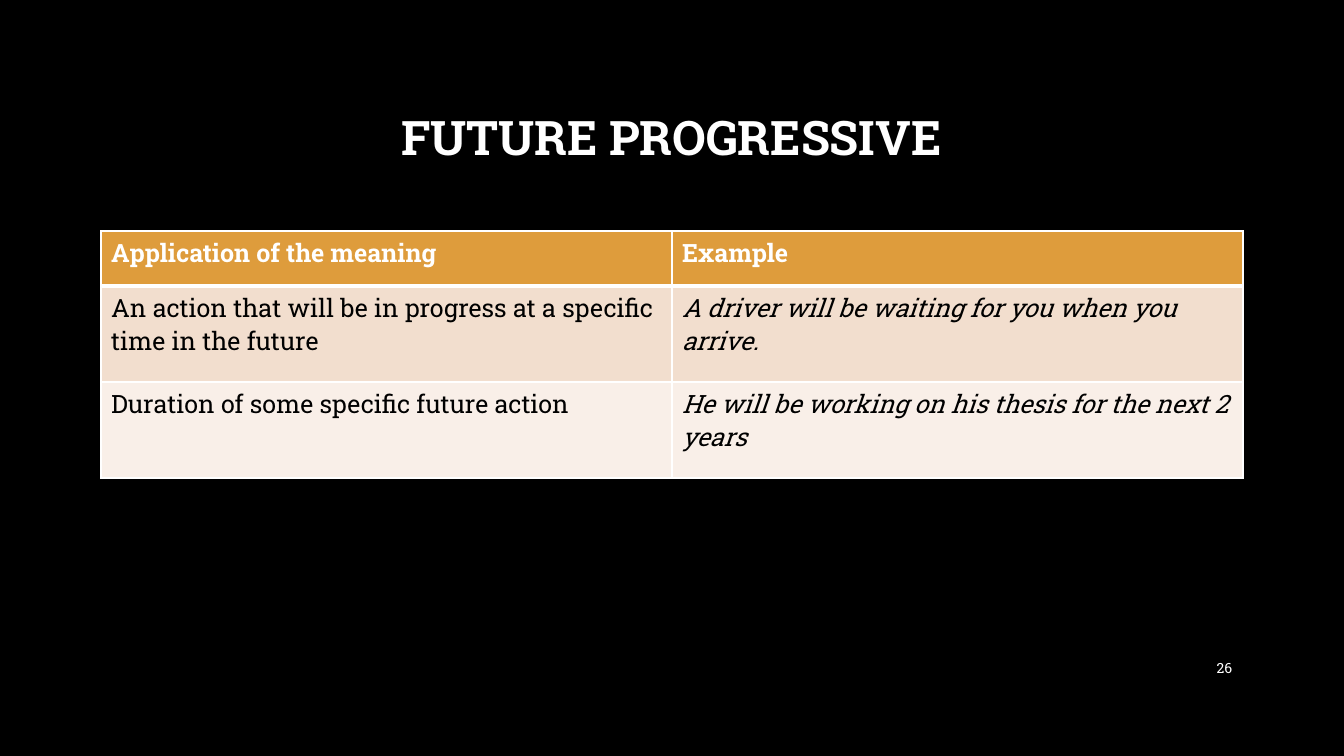
"""Build the slide on the future progressive tense and its uses."""
from dataclasses import dataclass

from lxml import etree
from pptx import Presentation
from pptx import util as u
from pptx.dml.color import RGBColor
from pptx.enum import text
from pptx.oxml import ns
from pptx.slide import Slide
from pptx.table import _Cell
from pptx.text.text import _Paragraph

PX_PER_INCH = 100.8
FONT = "Roboto Slab"
WHITE, BLACK = "FFFFFF", "000000"
THIN, THICK = 1, 3
COLUMN_WIDTH = 571


@dataclass(frozen=True)
class Style:
    size: int
    color: str
    bold: bool = False
    italic: bool = False


@dataclass(frozen=True)
class Label:
    wording: str
    left: int
    top: int
    width: int
    height: int
    align: text.PP_ALIGN
    style: Style
    line_spacing: float = 1.0


@dataclass(frozen=True)
class UsageRow:
    meaning: str
    example: str
    height: int
    fill: str
    meaning_style: Style
    example_style: Style
    top_line: int = THIN
    bottom_line: int = THIN


HEADING = Style(18, WHITE, bold=True)
MEANING = Style(18, BLACK)
EXAMPLE = Style(18, BLACK, italic=True)

LABELS = [
    Label("FUTURE PROGRESSIVE", 101, 67, 1141, 146, text.PP_ALIGN.CENTER,
          Style(34, WHITE, bold=True), 0.9),
    Label("26", 1159, 648, 83, 40, text.PP_ALIGN.RIGHT, Style(10, WHITE)),
]

USAGE = [
    UsageRow("Application of the meaning", "Example", 55, "DE9C3C",
             HEADING, HEADING, bottom_line=THICK),
    UsageRow("An action that will be in progress at a specific time in the future",
             "A driver will be waiting for you when you arrive.", 96, "F2DECE",
             MEANING, EXAMPLE, top_line=THICK),
    UsageRow("Duration of some specific future action",
             "He will be working on his thesis for the next 2 years", 96, "F9EFE8",
             MEANING, EXAMPLE),
]


def px(length: int) -> u.Emu:
    """Turn pixels into EMU."""
    return u.Emu(round(length * u.Inches(1) / PX_PER_INCH))


def rgb(color: str) -> RGBColor:
    """Turn a hex string into a colour."""
    return RGBColor.from_string(color)


def add_run(paragraph: _Paragraph, wording: str, style: Style) -> None:
    """Append one styled run to a paragraph."""
    run = paragraph.add_run()
    run.text = wording
    run.font.name = FONT
    run.font.size = u.Pt(style.size)
    run.font.bold = style.bold
    run.font.italic = style.italic
    run.font.color.rgb = rgb(style.color)


def add_label(slide: Slide, label: Label) -> None:
    """Draw a wrapped, vertically centred text box."""
    box = slide.shapes.add_textbox(
        px(label.left), px(label.top), px(label.width), px(label.height))
    frame = box.text_frame
    frame.word_wrap = True
    frame.vertical_anchor = text.MSO_ANCHOR.MIDDLE
    paragraph = frame.paragraphs[0]
    paragraph.alignment = label.align
    paragraph.line_spacing = label.line_spacing
    add_run(paragraph, label.wording, label.style)


def set_borders(cell: _Cell, top_line: int, bottom_line: int) -> None:
    """Give a cell white borders with widths in points."""
    properties = cell._tc.get_or_add_tcPr()
    widths = {"lnL": THIN, "lnR": THIN, "lnT": top_line, "lnB": bottom_line}
    for position, (side, width) in enumerate(widths.items()):
        line = etree.Element(ns.qn(f"a:{side}"), w=str(u.Pt(width)))
        fill = etree.SubElement(line, ns.qn("a:solidFill"))
        etree.SubElement(fill, ns.qn("a:srgbClr"), val=WHITE)
        properties.insert(position, line)


def add_usage_table(slide: Slide, left: int, top: int) -> None:
    """Draw the table of meanings and examples."""
    height = sum(row.height for row in USAGE)
    table = slide.shapes.add_table(
        len(USAGE), 2, px(left), px(top), px(2 * COLUMN_WIDTH), px(height)).table
    table.horz_banding = False
    for column in table.columns:
        column.width = px(COLUMN_WIDTH)
    for index, usage in enumerate(USAGE):
        table.rows[index].height = px(usage.height)
        entries = [(usage.meaning, usage.meaning_style),
                   (usage.example, usage.example_style)]
        for cell, (wording, style) in zip(table.rows[index].cells, entries):
            cell.fill.solid()
            cell.fill.fore_color.rgb = rgb(usage.fill)
            set_borders(cell, usage.top_line, usage.bottom_line)
            add_run(cell.text_frame.paragraphs[0], wording, style)


def main() -> None:
    """Build and save the slide."""
    deck = Presentation()
    deck.slide_width, deck.slide_height = px(1344), px(756)
    slide = deck.slides.add_slide(deck.slide_layouts[6])
    slide.background.fill.solid()
    slide.background.fill.fore_color.rgb = rgb(BLACK)
    add_usage_table(slide, 101, 231)
    for label in LABELS:
        add_label(slide, label)
    deck.save("out.pptx")


if __name__ == "__main__":
    main()
